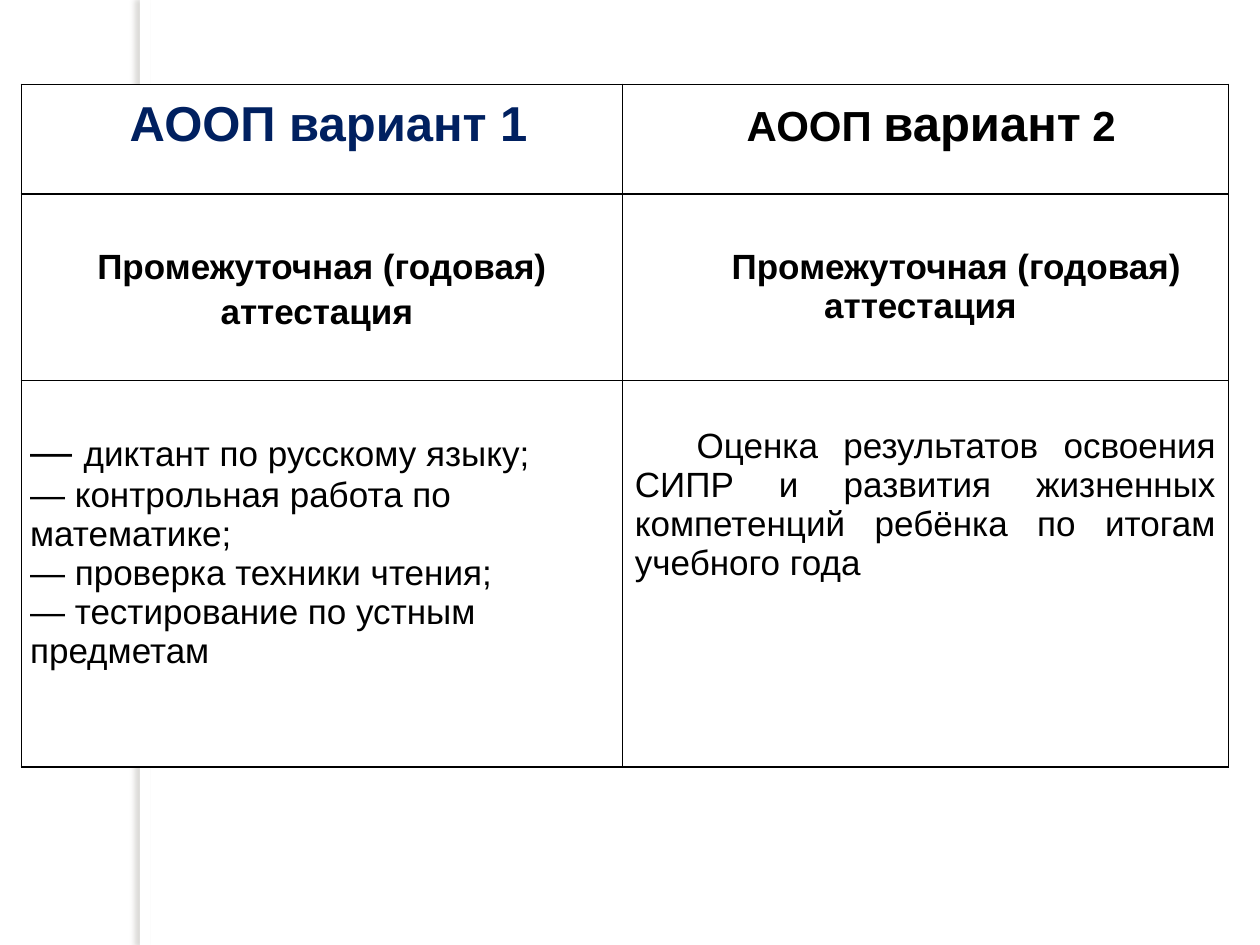
from lxml import etree
from pptx import Presentation
from pptx.dml.color import RGBColor
from pptx.enum.shapes import MSO_SHAPE
from pptx.enum.text import MSO_ANCHOR, PP_ALIGN
from pptx.oxml import parse_xml
from pptx.oxml.ns import nsdecls, qn
from pptx.util import Pt

RECT = MSO_SHAPE.RECTANGLE
TOP, MIDDLE = MSO_ANCHOR.TOP, MSO_ANCHOR.MIDDLE
LEFT, CENTER, JUSTIFY = PP_ALIGN.LEFT, PP_ALIGN.CENTER, PP_ALIGN.JUSTIFY
COLORS = {"white": "FFFFFF", "black": "000000", "navy": "002060", "shadow": "736F63"}
INDENT = Pt(35.3)

prs = Presentation()
prs.slide_width, prs.slide_height = Pt(720), Pt(540)
s = prs.slides.add_slide(prs.slide_layouts[6])

band = s.shapes.add_shape(RECT, Pt(80), Pt(0), Pt(5.8), Pt(540))
band.fill.solid()
band.fill.fore_color.rgb = RGBColor.from_string(COLORS["white"])
band.line.fill.background()
band._element.spPr.append(parse_xml(
    f'<a:effectLst {nsdecls("a")}><a:outerShdw blurRad="{Pt(3)}" dist="{Pt(3)}" '
    f'dir="10800000" algn="tl" rotWithShape="0"><a:srgbClr val="{COLORS["shadow"]}">'
    '<a:alpha val="25000"/></a:srgbClr></a:outerShdw></a:effectLst>'))

table = s.shapes.add_table(3, 2, Pt(12.2), Pt(48.2), Pt(689.8), Pt(390.2)).table
table.first_row = False
table.horz_banding = False
for column, width in zip(table.columns, (343.4, 346.4)):
    column.width = Pt(width)
for row, height in zip(table.rows, (62.6, 106.6, 221)):
    row.height = Pt(height)

attestation = [[("Промежуточная (годовая) аттестация ", 20)]]
tasks = [
    [("— ", 24), ("диктант по русскому языку;", 20)],
    [("— контрольная работа по математике;", 20)],
    [("— проверка техники чтения;", 20)],
    [("— тестирование по устным предметам", 20)],
]
result = [[("Оценка результатов освоения СИПР и развития жизненных компетенций "
            "ребёнка по итогам учебного года", 20)]]
title_1 = [[(" АООП вариант 1", 28)]]
title_2 = [[(" АООП ", 24), ("вариант", 28), (" 2", 24)]]

cells = [
    (0, 0, title_1, "navy", True, CENTER, TOP, 1.15, 0, (2.9, 2.9, 2.9, 2.9)),
    (0, 1, title_2, "black", True, CENTER, TOP, 1.15, 0, (2.9, 2.9, 2.9, 2.9)),
    (1, 0, attestation, "black", True, CENTER, MIDDLE, 1.15, 0, (5, 0, 5, 0)),
    (1, 1, attestation, "black", True, CENTER, MIDDLE, 1, INDENT, (7.2, 3.6, 7.2, 3.6)),
    (2, 0, tasks, "black", False, LEFT, TOP, 1, 0, (5, 27.6, 5, 0)),
    (2, 1, result, "black", False, JUSTIFY, TOP, 1, INDENT, (7.2, 26.6, 7.2, 3.6)),
]
for row, col, paragraphs, color, bold, align, anchor, spacing, indent, margins in cells:
    cell = table.cell(row, col)
    cell.vertical_anchor = anchor
    cell.margin_left, cell.margin_top, cell.margin_right, cell.margin_bottom = map(Pt, margins)
    tcPr = cell._tc.get_or_add_tcPr()
    for side in ("lnL", "lnR", "lnT", "lnB"):
        ln = etree.SubElement(tcPr, qn(f"a:{side}"), w=str(Pt(1)))
        fill = etree.SubElement(ln, qn("a:solidFill"))
        etree.SubElement(fill, qn("a:srgbClr"), val=COLORS["black"])
    cell.fill.solid()
    cell.fill.fore_color.rgb = RGBColor.from_string(COLORS["white"])
    tf = cell.text_frame
    for i, runs in enumerate(paragraphs):
        p = tf.add_paragraph() if i else tf.paragraphs[0]
        p.alignment = align
        p.line_spacing = spacing
        if indent:
            p._p.get_or_add_pPr().set("indent", str(indent))
        p.font.name = "Arial"
        p.font.bold = bold
        p.font.color.rgb = RGBColor.from_string(COLORS[color])
        for text, size in runs:
            r = p.add_run()
            r.text = text
            r.font.size = Pt(size)

prs.save("out.pptx")
